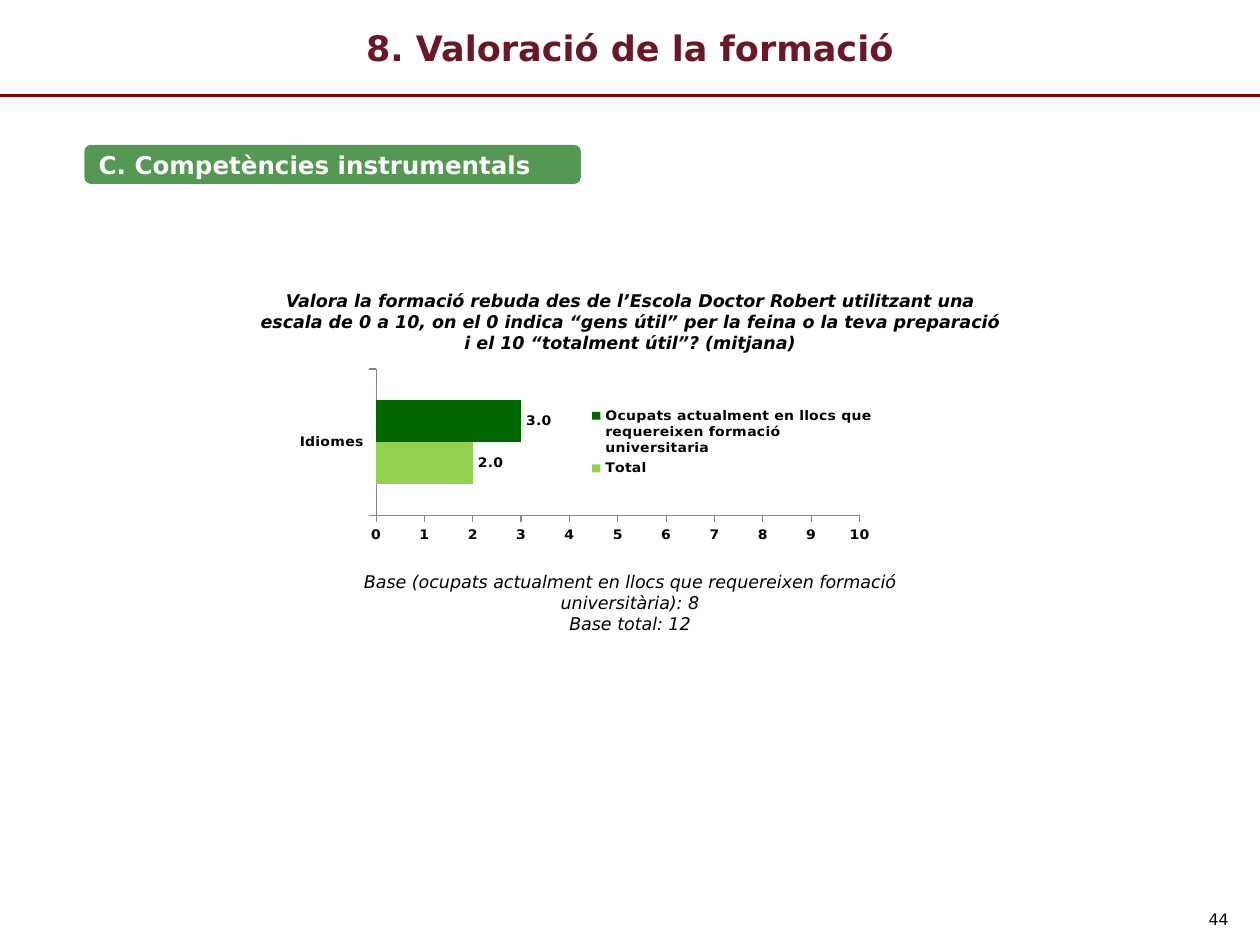
"""Build the slide on the rating of language training, with a clustered bar chart."""
import pptx
import pptx.chart.data
import pptx.dml.color
import pptx.enum.chart
import pptx.enum.shapes
import pptx.enum.text
import pptx.oxml
import pptx.oxml.ns
import pptx.util

Pt = pptx.util.Pt
ALIGN = pptx.enum.text.PP_ALIGN
ANCHOR = pptx.enum.text.MSO_ANCHOR
FONT = "DejaVu Sans"
COLORS = {"title": "6A1727", "rule": "800000", "section": "006600", "text": "000000",
          "white": "FFFFFF", "axis": "868686", "total": "92D050", "employed": "006600"}

TEXTS = [
    {"lines": ["8. Valoració de la formació"], "box": (0, 0, 720, 54.72),
     "align": ALIGN.CENTER, "anchor": ANCHOR.MIDDLE, "color": "title",
     "font": {"size": Pt(20), "bold": True}},
    {"lines": ["44"], "box": (541.44, 516.24, 167.76, 15.12),
     "align": ALIGN.RIGHT, "font": {"size": Pt(9)}},
    {"lines": ["Valora la formació rebuda des de l’Escola Doctor Robert utilitzant una escala "
               "de 0 a 10, on el 0 indica “gens útil” per la feina o la teva preparació "
               "i el 10 “totalment útil”? (mitjana)"],
     "box": (138.96, 162, 442.08, 43.92), "align": ALIGN.CENTER,
     "font": {"size": Pt(10), "bold": True, "italic": True}},
    {"lines": ["Base (ocupats actualment en llocs que requereixen formació universitària): 8",
               "Base total: 12"],
     "box": (184.32, 322.56, 351.36, 43.92), "align": ALIGN.CENTER,
     "font": {"size": Pt(10), "italic": True}},
]
SECTION = {"lines": ["C. Competències instrumentals"], "align": ALIGN.LEFT,
           "anchor": ANCHOR.MIDDLE, "color": "white", "font": {"size": Pt(14), "bold": True}}
SECTION_BOX = (48.24, 82.8, 283.68, 22.32)
RULE_Y = 54.72
CATEGORIES = ["Idiomes"]
SERIES = [("Total", [2], "total"),
          ("Ocupats actualment en llocs que requereixen formació universitaria", [3], "employed")]
CHART_BOX = (-14.4, 205.92, 521.28, 104.4)
PLOT_LAYOUT = {"x": 0.44, "y": 0.05, "w": 0.53, "h": 0.85}
LEGEND_LAYOUT = {"x": 0.67, "y": 0.25, "w": 0.32, "h": 0.45}
CHART_FONT = {"size": Pt(8), "bold": True}


def rgb(name):
    return pptx.dml.color.RGBColor.from_string(COLORS[name])


def place(box):
    return [Pt(length) for length in box]


def apply(target, values):
    for name, value in values.items():
        setattr(target, name, value)


def style_font(font, values, color="text"):
    apply(font, {"name": FONT, **values})
    font.color.rgb = rgb(color)


def write(frame, content):
    apply(frame, {"word_wrap": True, "vertical_anchor": content.get("anchor", ANCHOR.TOP)})
    frame.text = "\n".join(content["lines"])
    for paragraph in frame.paragraphs:
        paragraph.alignment = content["align"]
        style_font(paragraph.font, content["font"], content.get("color", "text"))


def layout_xml(position, inner=False):
    target = '<c:layoutTarget val="inner"/>' if inner else ""
    modes = "".join(f'<c:{key}Mode val="edge"/>' for key in "xy")
    sizes = "".join(f'<c:{key} val="{value}"/>' for key, value in position.items())
    return pptx.oxml.parse_xml(
        f'<c:layout {pptx.oxml.ns.nsdecls("c")}><c:manualLayout>'
        f"{target}{modes}{sizes}</c:manualLayout></c:layout>")


def set_layout(parent, layout, index):
    for old in parent.findall(pptx.oxml.ns.qn("c:layout")):
        parent.remove(old)
    parent.insert(index, layout)


def add_ratings(shapes):
    ratings = pptx.chart.data.CategoryChartData()
    ratings.categories = CATEGORIES
    for name, values, _ in SERIES:
        ratings.add_series(name, values)
    chart = shapes.add_chart(pptx.enum.chart.XL_CHART_TYPE.BAR_CLUSTERED,
                             *place(CHART_BOX), ratings).chart
    apply(chart, {"has_title": False, "has_legend": True})
    style_font(chart.font, CHART_FONT)
    plot = chart.plots[0]
    apply(plot, {"gap_width": 150, "overlap": 0, "vary_by_categories": False})
    for series, (_, _, color) in zip(plot.series, SERIES):
        series.format.fill.solid()
        series.format.fill.fore_color.rgb = rgb(color)
        labels = series.data_labels
        apply(labels, {"show_value": True, "number_format": "0.0",
                       "number_format_is_linked": False,
                       "position": pptx.enum.chart.XL_LABEL_POSITION.OUTSIDE_END})
        style_font(labels.font, CHART_FONT)

    apply(chart.value_axis, {"minimum_scale": 0, "maximum_scale": 10, "major_unit": 1})
    apply(chart.value_axis.tick_labels,
          {"number_format": "#,##0", "number_format_is_linked": False})
    for axis in (chart.category_axis, chart.value_axis):
        apply(axis, {"has_major_gridlines": False,
                     "major_tick_mark": pptx.enum.chart.XL_TICK_MARK.OUTSIDE})
        axis.format.line.color.rgb = rgb("axis")
        axis.format.line.width = Pt(0.75)
        style_font(axis.tick_labels.font, CHART_FONT)

    legend = chart.legend
    apply(legend, {"position": pptx.enum.chart.XL_LEGEND_POSITION.RIGHT,
                   "include_in_layout": False})
    style_font(legend.font, CHART_FONT)
    legend_part = chart.element.find(".//" + pptx.oxml.ns.qn("c:legend"))
    plot_area = chart.element.find(".//" + pptx.oxml.ns.qn("c:plotArea"))
    set_layout(legend_part, layout_xml(LEGEND_LAYOUT), 1)
    set_layout(plot_area, layout_xml(PLOT_LAYOUT, inner=True), 0)


def main():
    deck = pptx.Presentation()
    apply(deck, {"slide_width": Pt(720), "slide_height": Pt(540)})
    shapes = deck.slides.add_slide(deck.slide_layouts[6]).shapes

    rule = shapes.add_connector(pptx.enum.shapes.MSO_CONNECTOR.STRAIGHT,
                                *place((0, RULE_Y, 720, RULE_Y)))
    rule.line.color.rgb = rgb("rule")
    rule.line.width = Pt(1.5)
    rule.element.spPr.append(
        pptx.oxml.parse_xml(f'<a:effectLst {pptx.oxml.ns.nsdecls("a")}/>'))

    section = shapes.add_shape(pptx.enum.shapes.MSO_SHAPE.ROUNDED_RECTANGLE, *place(SECTION_BOX))
    section.shadow.inherit = False
    section.line.fill.background()
    section.fill.solid()
    section.fill.fore_color.rgb = rgb("section")
    section.element.spPr.find(".//" + pptx.oxml.ns.qn("a:srgbClr")).append(
        pptx.oxml.parse_xml(f'<a:alpha {pptx.oxml.ns.nsdecls("a")} val="67000"/>'))
    write(section.text_frame, SECTION)

    add_ratings(shapes)
    for content in TEXTS:
        write(shapes.add_textbox(*place(content["box"])).text_frame, content)
    deck.save("out.pptx")


if __name__ == "__main__":
    main()
